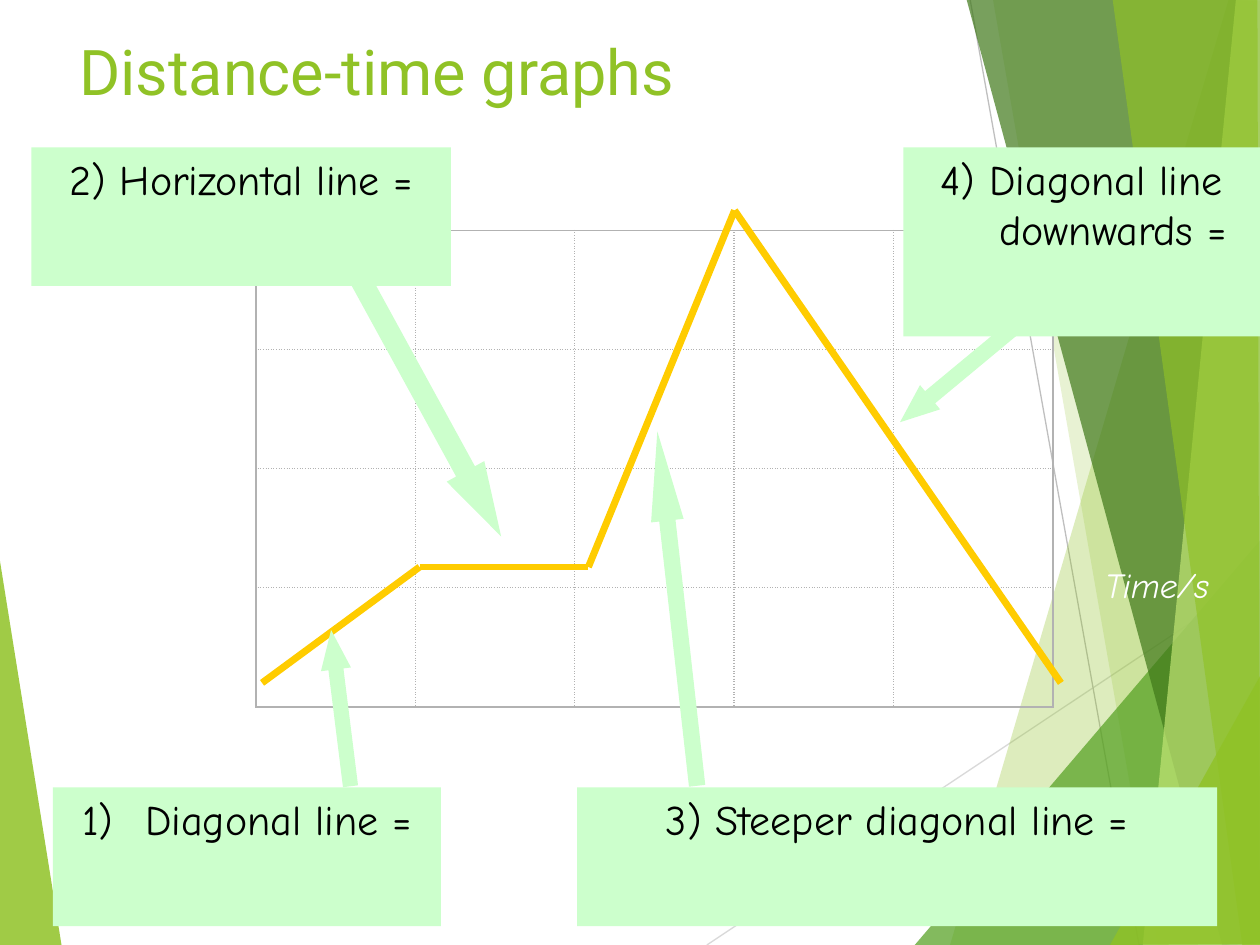
from pptx import Presentation
from pptx.dml.color import RGBColor
from pptx.enum.shapes import MSO_CONNECTOR, MSO_SHAPE
from pptx.enum.text import MSO_ANCHOR, PP_ALIGN
from pptx.oxml import parse_xml
from pptx.oxml.ns import nsdecls, qn
from pptx.util import Pt
from lxml.etree import SubElement

PX = 9144  # 100 px to the inch

THEME = {
    "lime": "90C226", "green": "54A021", "forest": "3F7819", "pale": "C0E474",
    "grid": "B2B2B2", "graph": "FFCC00", "label": "CCFFCC",
    "title": {"size": Pt(36), "name": "Roboto", "color": "90C226"},
    "note": {"size": Pt(24), "name": "Comic Neue", "color": "000000"},
    "axis": {"size": Pt(20), "name": "Comic Neue", "color": "FFFFFF", "italic": True},
}

deck = Presentation()
deck.slide_width, deck.slide_height = 1000 * PX, 750 * PX
page = deck.slides.add_slide(deck.slide_layouts[6])


def write(shape, text, style, anchor=MSO_ANCHOR.TOP):
    """Put one paragraph into the shape and return it."""
    shape.text_frame.word_wrap = True
    shape.text_frame.vertical_anchor = anchor
    para = shape.text_frame.paragraphs[0]
    span = para.add_run()
    span.text = text
    for name, value in style.items():
        if name == "color":
            span.font.color.rgb = RGBColor.from_string(value)
        else:
            setattr(span.font, name, value)
    return para


def draw_line(start, end, color, width):
    line = page.shapes.add_connector(
        MSO_CONNECTOR.STRAIGHT, *(value * PX for value in (*start, *end)))
    line.line.color.rgb = RGBColor.from_string(color)
    line.line.width = Pt(width)
    SubElement(line._element.spPr, qn("a:effectLst"))


# Background rays and translucent facets
draw_line((561, 750), (1001, 457), "D9D9D9", 0.75)
draw_line((770, 0), (904, 750), "BFBFBF", 0.75)

facets = [
    ("lime", 85, [(-1, 439), (49, 751), (-1, 750)]),
    ("lime", 30, [(975, 0), (754, 750), (1002, 751), (1001, 1)]),
    ("lime", 20, [(788, -1), (919, 750), (1001, 750), (1001, -1)]),
    ("green", 72, [(726, 750), (1000, 429), (1001, 750)]),
    ("forest", 70, [(767, -1), (970, 750), (1001, 749), (1001, -1)]),
    ("pale", 70, [(981, -1), (907, 750), (1001, 750), (1000, -1)]),
    ("lime", 65, [(883, -1), (986, 750), (1000, 750), (998, -1)]),
    ("lime", 80, [(881, 750), (1001, 535), (1001, 749)]),
]
for color, opacity, points in facets:
    builder = page.shapes.build_freeform(*points[0], scale=PX)
    builder.add_line_segments(points[1:], close=True)
    facet = builder.convert_to_shape()
    facet.shadow.inherit = False
    facet.line.fill.background()
    facet.fill.solid()
    facet.fill.fore_color.rgb = RGBColor.from_string(THEME[color])
    color_node = facet._element.spPr.find(qn("a:solidFill"))[0]
    SubElement(color_node, qn("a:alpha"), val=str(opacity * 1000))

title = page.shapes.add_textbox(53 * PX, 15 * PX, 694 * PX, 82 * PX)
write(title, "Distance-time graphs", THEME["title"], MSO_ANCHOR.MIDDLE)

# Graph grid: solid outside, dotted inside
ROWS, COLUMNS = 4, 5
grid = page.shapes.add_table(
    ROWS, COLUMNS, 203 * PX, 183 * PX, 633 * PX, 378 * PX).table
grid.first_row = grid.horz_banding = False
for row in range(ROWS):
    for column in range(COLUMNS):
        cell = grid.cell(row, column)
        cell.fill.background()
        outer = {"L": column == 0, "R": column == COLUMNS - 1,
                 "T": row == 0, "B": row == ROWS - 1}
        for position, (side, is_outer) in enumerate(outer.items()):
            dash = "solid" if is_outer else "sysDot"
            cell._tc.get_or_add_tcPr().insert(position, parse_xml(
                f'<a:ln{side} {nsdecls("a")} w="12700"><a:solidFill>'
                f'<a:srgbClr val="{THEME["grid"]}"/></a:solidFill>'
                f'<a:prstDash val="{dash}"/></a:ln{side}>'))

journey = [(208, 542), (333, 450), (467, 450), (583, 167), (842, 542)]
for start, end in zip(journey, journey[1:]):
    draw_line(start, end, THEME["graph"], 4)

# Each label: text, numbered, box, arrow box, arrow angle, arrow head length
labels = [
    ("4) Diagonal line downwards =", False, (717, 117, 283, 150),
     (700, 283, 124, 25), 140.3, 1.24),
    ("3) Steeper diagonal line =", False, (458, 625, 508, 110),
     (396, 470, 283, 26), 263.6, 2.74),
    ("Diagonal line =", True, (42, 625, 308, 110),
     (208, 550, 125, 24), 262.9, 1.31),
    ("2) Horizontal line =", False, (25, 117, 333, 110),
     (226, 307, 232, 34), 61.3, 1.73),
]
for text, numbered, box_frame, arrow_frame, angle, head in labels:
    box = page.shapes.add_shape(
        MSO_SHAPE.RECTANGLE, *(value * PX for value in box_frame))
    arrow = page.shapes.add_shape(
        MSO_SHAPE.RIGHT_ARROW, *(value * PX for value in arrow_frame))
    arrow.rotation = angle
    arrow.adjustments[1] = head
    for shape in (box, arrow):
        shape.shadow.inherit = False
        shape.line.fill.background()
        shape.fill.solid()
        shape.fill.fore_color.rgb = RGBColor.from_string(THEME["label"])
    para = write(box, text, THEME["note"])
    para.alignment = PP_ALIGN.CENTER
    properties = para._p.get_or_add_pPr()
    properties.set("marL", str(50 * PX))
    properties.set("indent", str(-50 * PX))
    if numbered:
        SubElement(properties, qn("a:buFont"), typeface=THEME["note"]["name"])
        SubElement(properties, qn("a:buAutoNum"), type="arabicParenR")

axis = page.shapes.add_textbox(867 * PX, 442 * PX, 133 * PX, 43 * PX)
write(axis, "Time/s", THEME["axis"])

deck.save("out.pptx")
